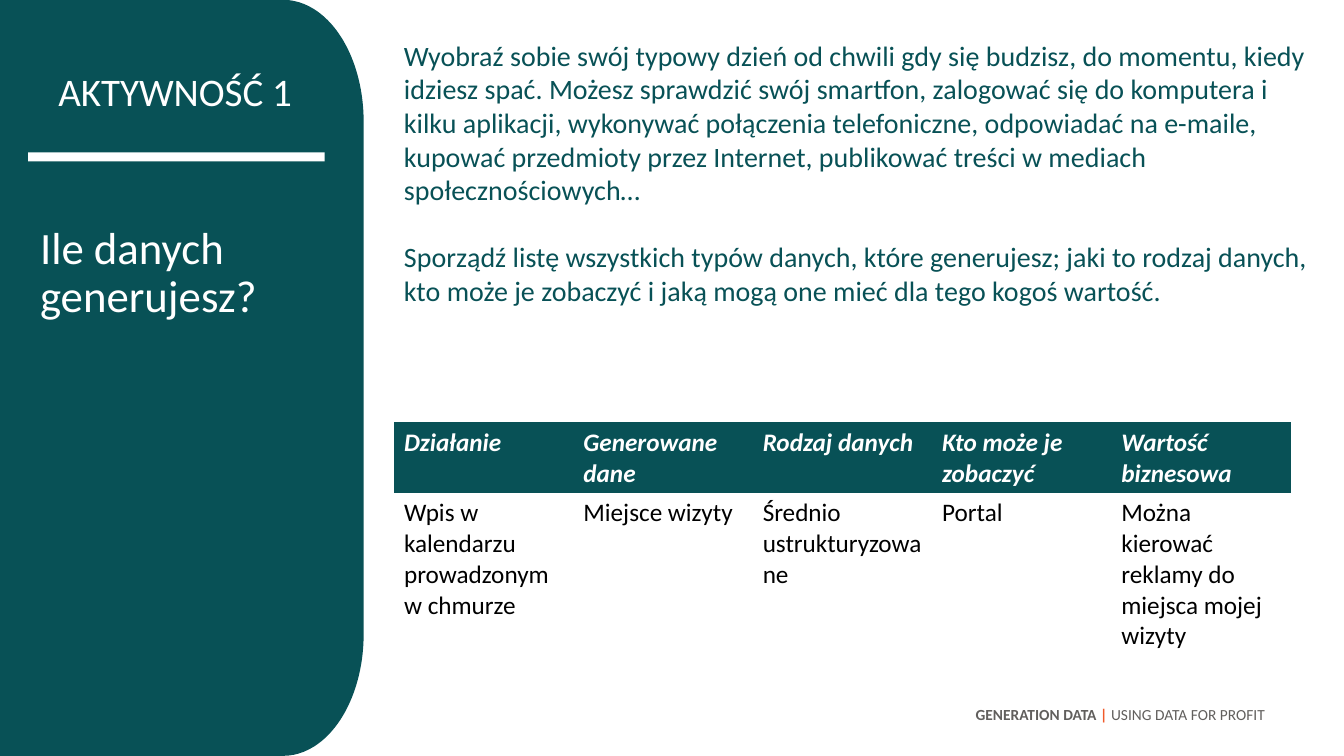
import pptx
import pptx.dml.color
import pptx.enum.shapes
import pptx.enum.text
import pptx.util
from dataclasses import dataclass

Cm, Pt = pptx.util.Cm, pptx.util.Pt
RGB = pptx.dml.color.RGBColor.from_string
SHAPE = pptx.enum.shapes.MSO_SHAPE
ALIGN = pptx.enum.text.PP_ALIGN
PLAIN_TABLE = "{2D5ABB26-0587-4C30-8999-92F81FD0307C}"


@dataclass(frozen=True)
class Theme:
    font: str = "Calibri"
    teal: str = "085156"
    white: str = "FFFFFF"
    black: str = "000000"
    grey: str = "615F5D"
    orange: str = "F15A2A"
    label: float = 27.9
    heading: float = 32
    body: float = 20
    cell: float = 18
    footer: float = 11


class Builder:
    def __init__(self, slide, theme):
        self.s = slide
        self.theme = theme

    def style(self, font, size, color, bold=False, italic=False):
        font.name = self.theme.font
        font.size = Pt(size)
        font.bold, font.italic = bold, italic
        font.color.rgb = RGB(color)

    def shape(self, kind, left, top, width, height, color, rotation=0):
        sp = self.s.shapes.add_shape(kind, Cm(left), Cm(top), Cm(width), Cm(height))
        sp.rotation = rotation
        sp.shadow.inherit = False
        sp.fill.solid()
        sp.fill.fore_color.rgb = RGB(color)
        sp.line.fill.background()

    def text(self, left, top, width, height, paragraphs, size, color,
             spacing=None, gap=0, align=ALIGN.LEFT):
        """Each paragraph is a list of (text, color, bold) runs or a plain string."""
        sp = self.s.shapes.add_textbox(Cm(left), Cm(top), Cm(width), Cm(height))
        tf = sp.text_frame
        tf.word_wrap = True
        for i, content in enumerate(paragraphs):
            p = tf.add_paragraph() if i else tf.paragraphs[0]
            p.alignment = align
            p.line_spacing = spacing
            if i:
                p.space_before = Pt(gap)
            if isinstance(content, str):
                p.text = content
                self.style(p.font, size, color)
                continue
            for words, run_color, bold in content:
                r = p.add_run()
                r.text = words
                self.style(r.font, size, run_color, bold)

    def table(self, left, top, col_width, row_height, rows):
        cols = len(rows[0])
        frame = self.s.shapes.add_table(len(rows), cols, Cm(left), Cm(top),
                                        Cm(col_width * cols), Cm(row_height * len(rows)))
        table = frame.table
        table.first_row = table.horz_banding = False
        table._tbl.tblPr[0].text = PLAIN_TABLE
        for column in table.columns:
            column.width = Cm(col_width)
        for i, row in enumerate(rows):
            header = i == 0
            for j, words in enumerate(row):
                cell = table.cell(i, j)
                cell.text = words
                color = self.theme.white if header else self.theme.black
                self.style(cell.text_frame.paragraphs[0].font, self.theme.cell,
                           color, header, header)
                if header:
                    cell.fill.solid()
                    cell.fill.fore_color.rgb = RGB(self.theme.teal)
                else:
                    cell.fill.background()


def main():
    prs = pptx.Presentation()
    prs.slide_width, prs.slide_height = Cm(33.87), Cm(19.05)
    t = Theme()
    b = Builder(prs.slides.add_slide(prs.slide_layouts[6]), t)

    # Side panel with rounded right edge
    b.shape(SHAPE.RECTANGLE, 0, 0, 7.14, 19.05, t.teal)
    b.shape(SHAPE.FLOWCHART_TERMINATOR, -2.39, 7.49, 19.05, 4.06, t.teal, 270)
    b.shape(SHAPE.RECTANGLE, 0.71, 3.84, 7.47, 0.23, t.white)

    # Footer
    b.text(1.45, 17.65, 30.68, 1.14,
           [[("GENERATION DATA ", t.grey, True), ("|", t.orange, True),
             (" USING DATA FOR PROFIT", t.grey, False)]],
           t.footer, t.grey, align=ALIGN.RIGHT)

    # Panel headings
    b.text(1.22, 1.9, 6.48, 1.93, ["AKTYWNOŚĆ 1"], t.label, t.white, spacing=0.7)
    b.text(0.76, 5.56, 7.39, 10.11, ["Ile danych generujesz?"],
           t.heading, t.white, spacing=0.9)

    # Instructions
    b.text(9.93, 0.84, 23.44, 7.09, [
        "Wyobraź sobie swój typowy dzień od chwili gdy się budzisz, do momentu, "
        "kiedy idziesz spać. Możesz sprawdzić swój smartfon, zalogować się do "
        "komputera i kilku aplikacji, wykonywać połączenia telefoniczne, odpowiadać "
        "na e-maile, kupować przedmioty przez Internet, publikować treści w mediach "
        "społecznościowych…",
        "Sporządź listę wszystkich typów danych, które generujesz; jaki to rodzaj "
        "danych, kto może je zobaczyć i jaką mogą one mieć dla tego kogoś wartość.",
    ], t.body, t.teal, gap=24)

    # Activity table, last row left open for answers
    b.table(9.93, 10.64, 4.52, 1.03, [
        ["Działanie", "Generowane dane", "Rodzaj danych",
         "Kto może je zobaczyć", "Wartość biznesowa"],
        ["Wpis w kalendarzu prowadzonym w chmurze", "Miejsce wizyty",
         "Średnio ustrukturyzowane", "Portal",
         "Można kierować reklamy do miejsca mojej wizyty"],
        [""] * 5,
    ])

    prs.save("out.pptx")


if __name__ == "__main__":
    main()
